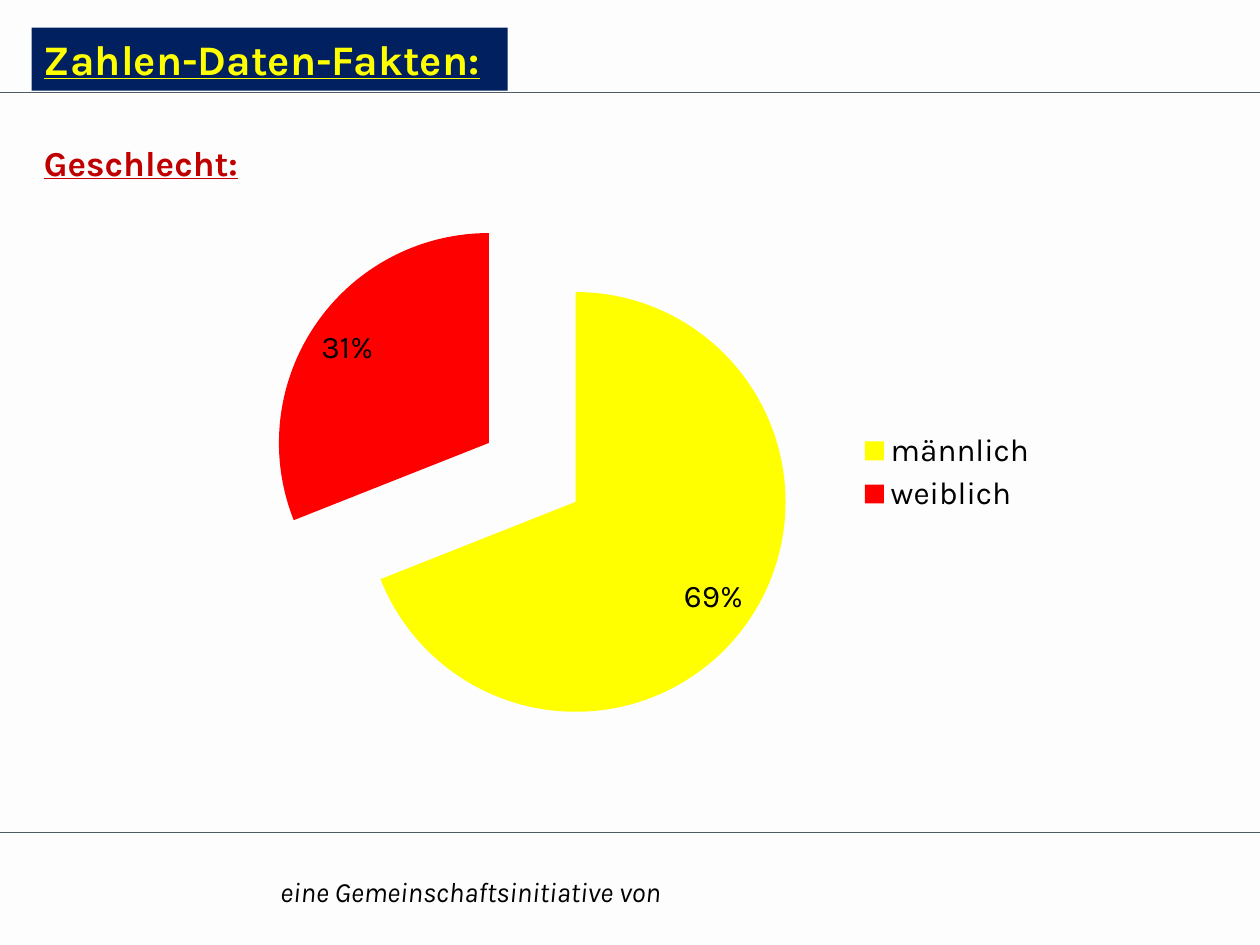
from pptx import Presentation
from pptx.chart.data import CategoryChartData
from pptx.dml.color import RGBColor
from pptx.enum.chart import XL_CHART_TYPE, XL_LABEL_POSITION, XL_LEGEND_POSITION
from pptx.enum.shapes import MSO_CONNECTOR, MSO_SHAPE
from pptx.enum.text import MSO_ANCHOR, PP_ALIGN
from pptx.oxml import parse_xml
from pptx.oxml.ns import nsdecls, qn
from pptx.oxml.xmlchemy import OxmlElement
from pptx.util import Inches, Pt

PIE = XL_CHART_TYPE.PIE
INSIDE_END = XL_LABEL_POSITION.INSIDE_END
LEGEND_RIGHT = XL_LEGEND_POSITION.RIGHT
STRAIGHT = MSO_CONNECTOR.STRAIGHT
RECTANGLE = MSO_SHAPE.RECTANGLE
MIDDLE = MSO_ANCHOR.MIDDLE
LEFT, CENTER = PP_ALIGN.LEFT, PP_ALIGN.CENTER

FONT = "Karla"
PAPER = RGBColor(0xFD, 0xFD, 0xFD)
SLATE = RGBColor(0x4C, 0x5D, 0x68)
NAVY = RGBColor(0x00, 0x20, 0x60)
YELLOW = RGBColor(0xFF, 0xFF, 0x00)
RED = RGBColor(0xFF, 0x00, 0x00)
DARK_RED = RGBColor(0xC0, 0x00, 0x00)
BLACK = RGBColor(0x00, 0x00, 0x00)

WIDTH, HEIGHT = Inches(10), Inches(7.5)
MARGIN = 0.25 / 10
TOP_RULE, BOTTOM_RULE = 0.73 / 7.5, 6.61 / 7.5


def area(left, top, width, height):
    """Turn shares of the slide into lengths."""
    return (int(left * WIDTH), int(top * HEIGHT),
            int(width * WIDTH), int(height * HEIGHT))


def style_font(font, size, color=BLACK, bold=False, italic=False, underline=False):
    """Set the look of a font."""
    font.name, font.size = FONT, Pt(size)
    font.bold, font.italic, font.underline = bold, italic, underline
    font.color.rgb = color


def write(sp, text, align=LEFT, **look):
    """Write one formatted line of text into a shape."""
    tf = sp.text_frame
    tf.word_wrap = True
    tf.vertical_anchor = MIDDLE
    p = tf.paragraphs[0]
    p.alignment = align
    r = p.add_run()
    r.text = text
    style_font(r.font, **look)


def add_rule(s, y, weight):
    """Draw a line across the whole slide."""
    line = s.shapes.add_connector(STRAIGHT, WIDTH, int(y * HEIGHT), 0, int(y * HEIGHT))
    line.line.color.rgb = SLATE
    line.line.width = Pt(weight)
    line._element.spPr.append(OxmlElement("a:effectLst"))


def add_text(s, box, text, **look):
    """Add a text box."""
    write(s.shapes.add_textbox(*area(*box)), text, **look)


def add_banner(s, box, text, fill, **look):
    """Add a filled rectangle with text."""
    sp = s.shapes.add_shape(RECTANGLE, *area(*box))
    sp.shadow.inherit = False
    sp.fill.solid()
    sp.fill.fore_color.rgb = fill
    sp.line.fill.background()
    write(sp, text, **look)


def add_pie(s, box, shares, colors, explosion):
    """Add an exploded pie chart with percentages and a legend."""
    data = CategoryChartData(number_format="0%")
    data.categories = list(shares)
    data.add_series("Series 1", list(shares.values()))
    chart = s.shapes.add_chart(PIE, *area(*box), data).chart
    chart.has_title = False
    style_font(chart.font, 18)
    chart.has_legend = True
    chart.legend.position = LEGEND_RIGHT
    chart.legend.include_in_layout = False

    plot = chart.plots[0]
    plot.vary_by_categories = True
    series = plot.series[0]
    for i, color in enumerate(colors):
        fill = series.points[i].format.fill
        fill.solid()
        fill.fore_color.rgb = color
    series._element.find(qn("c:dPt")).addprevious(
        parse_xml(f'<c:explosion {nsdecls("c")} val="{explosion}"/>'))

    plot.has_data_labels = True
    labels = plot.data_labels
    labels.show_value = True
    labels.number_format = "0%"
    labels.number_format_is_linked = False
    labels.position = INSIDE_END
    style_font(labels.font, 18)


def main():
    """Build the slide and save it."""
    prs = Presentation()
    prs.slide_width, prs.slide_height = WIDTH, HEIGHT
    s = prs.slides.add_slide(prs.slide_layouts[6])
    s.background.fill.solid()
    s.background.fill.fore_color.rgb = PAPER

    add_rule(s, TOP_RULE, 0.5)
    add_rule(s, BOTTOM_RULE, 0.75)
    add_text(s, (0.19, 6.89 / 7.5, 0.367, 0.37 / 7.5),
             "eine Gemeinschaftsinitiative von", align=CENTER, size=16, italic=True)
    add_text(s, (MARGIN, 1.07 / 7.5, 0.902, 0.44 / 7.5), "Geschlecht:",
             size=20, color=DARK_RED, bold=True, underline=True)
    add_banner(s, (MARGIN, 0.22 / 7.5, 0.378, 0.5 / 7.5), "Zahlen-Daten-Fakten:",
               NAVY, size=24, color=YELLOW, bold=True, underline=True)
    add_pie(s, (1 / 6, 1.53 / 7.5, 2 / 3, 4.44 / 7.5),
            {"männlich": 0.69, "weiblich": 0.31}, (YELLOW, RED), explosion=25)
    prs.save("out.pptx")


if __name__ == "__main__":
    main()
